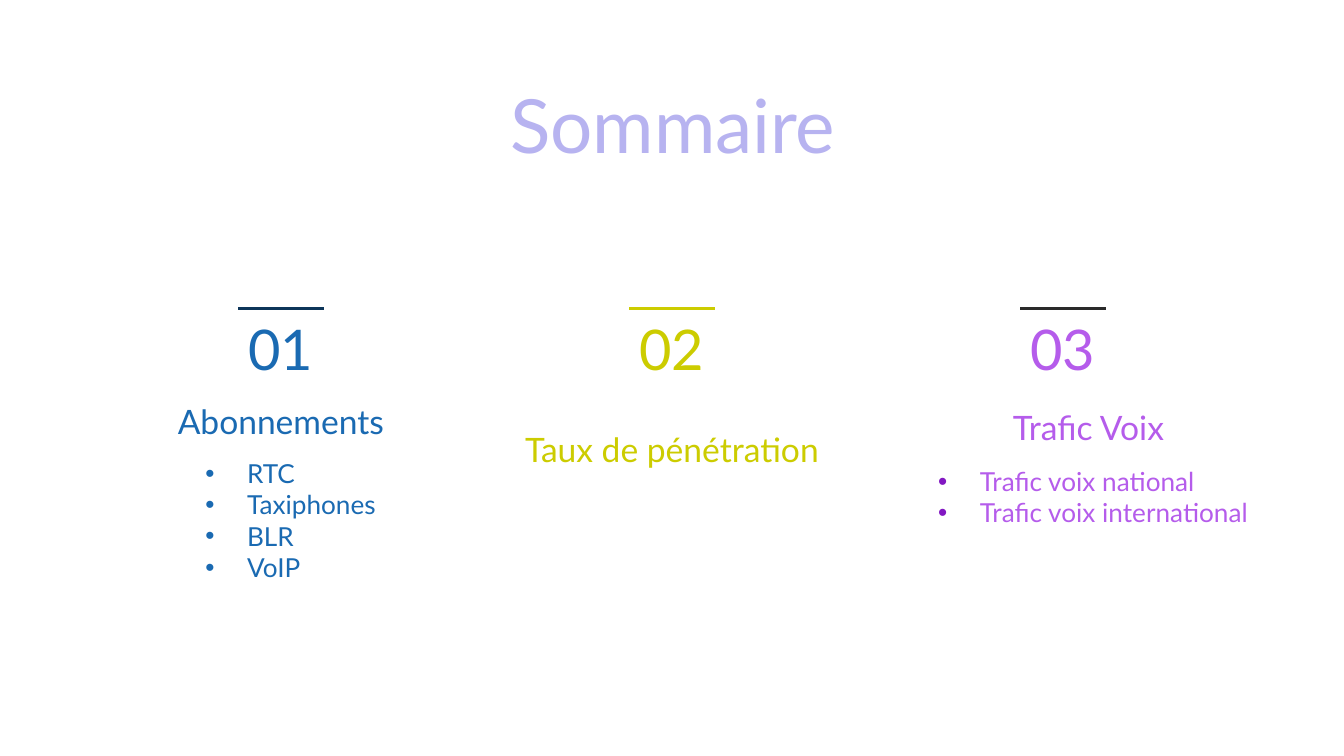
from lxml.etree import SubElement
from pptx import Presentation
from pptx.dml.color import RGBColor
from pptx.enum.shapes import MSO_CONNECTOR
from pptx.enum.text import MSO_ANCHOR, MSO_AUTO_SIZE, PP_ALIGN
from pptx.oxml.ns import qn
from pptx.util import Cm, Pt

FONT = "Lato"
STEP = 7.39
INSET = 0.25
TOP, MID, LOW = MSO_ANCHOR.TOP, MSO_ANCHOR.MIDDLE, MSO_ANCHOR.BOTTOM
COLS = [
    ("01", "Abonnements", "1A6AB2", "0D3559", 2.11, 7.32, TOP),
    ("02", "Taux de pénétration", "CCCC00", "CCCC00", 9.5, 7.09, LOW),
    ("03", "Trafic Voix", "B55CEB", "2A2A2A", 17.37, 7.06, MID),
]
LISTS = [
    (["RTC", "Taxiphones", "BLR", "VoIP"], (3.63, 8.51, 4.27, 2.64), "1A6AB2", "1A6AB2"),
    (["Trafic voix national", "Trafic voix international"], (17.48, 8.66, 7.92, 1.45), "B55CEB", "8218C2"),
]


def color(code):
    return RGBColor.from_string(code)


def apply(item, form):
    for key, value in form.items():
        setattr(item, key, value)


def write(para, text, size, code):
    run = para.add_run()
    run.text = text
    apply(run.font, {"name": FONT, "size": Pt(size), "bold": False})
    run.font.color.rgb = color(code)


def setup(frame, anchor, top=INSET):
    apply(frame, {
        "word_wrap": True,
        "auto_size": MSO_AUTO_SIZE.NONE,
        "vertical_anchor": anchor,
        "margin_left": Cm(INSET),
        "margin_right": Cm(INSET),
        "margin_top": Cm(top),
        "margin_bottom": Cm(top),
    })


def add_box(slide, area):
    return slide.shapes.add_textbox(*map(Cm, area))


def fill_label(shape, text, size, code, anchor):
    setup(shape.text_frame, anchor)
    para = shape.text_frame.paragraphs[0]
    para.alignment = PP_ALIGN.CENTER
    write(para, text, size, code)


def add_title(slide):
    title = slide.shapes.title
    area = {"left": 2.01, "top": 1.24, "width": 21.41, "height": 2.59}
    apply(title, {key: Cm(value) for key, value in area.items()})
    fill_label(title, "Sommaire", 40, "B7B3F0", TOP)


def add_rule(slide, left, code):
    rule = slide.shapes.add_connector(
        MSO_CONNECTOR.STRAIGHT, Cm(left), Cm(5.82), Cm(left + 1.63), Cm(5.82))
    rule.line.width = Pt(1.5)
    rule.line.color.rgb = color(code)
    SubElement(rule.element.spPr, qn("a:effectLst"))


def add_bullet(para, code):
    props = para._p.get_or_add_pPr()
    for key, value in {"marL": Cm(0.79), "indent": Cm(-0.79)}.items():
        props.set(key, str(int(value)))
    tint = SubElement(props, qn("a:buClr"))
    SubElement(tint, qn("a:srgbClr"), val=code)
    SubElement(props, qn("a:buFont"), typeface="Arial")
    SubElement(props, qn("a:buChar"), char="•")


def add_list(slide, items, area, code, dot):
    frame = add_box(slide, area).text_frame
    setup(frame, TOP, 0.13)
    for num, text in enumerate(items):
        para = frame.add_paragraph() if num else frame.paragraphs[0]
        add_bullet(para, dot)
        write(para, text, 14, code)


def main():
    deck = Presentation()
    apply(deck, {"slide_width": Cm(25.4), "slide_height": Cm(14.28)})
    slide = deck.slides.add_slide(deck.slide_layouts[5])
    add_title(slide)
    for num, (mark, name, code, line, left, top, anchor) in enumerate(COLS):
        shift = num * STEP
        digit = add_box(slide, (4.29 + shift, 6.22, 2.03, 1.24))
        fill_label(digit, mark, 30, code, LOW)
        label = add_box(slide, (left, top, 6.4, 2.03))
        fill_label(label, name, 18, code, anchor)
        add_rule(slide, 4.5 + shift, line)
    for entry in LISTS:
        add_list(slide, *entry)
    deck.save("out.pptx")


if __name__ == "__main__":
    main()
